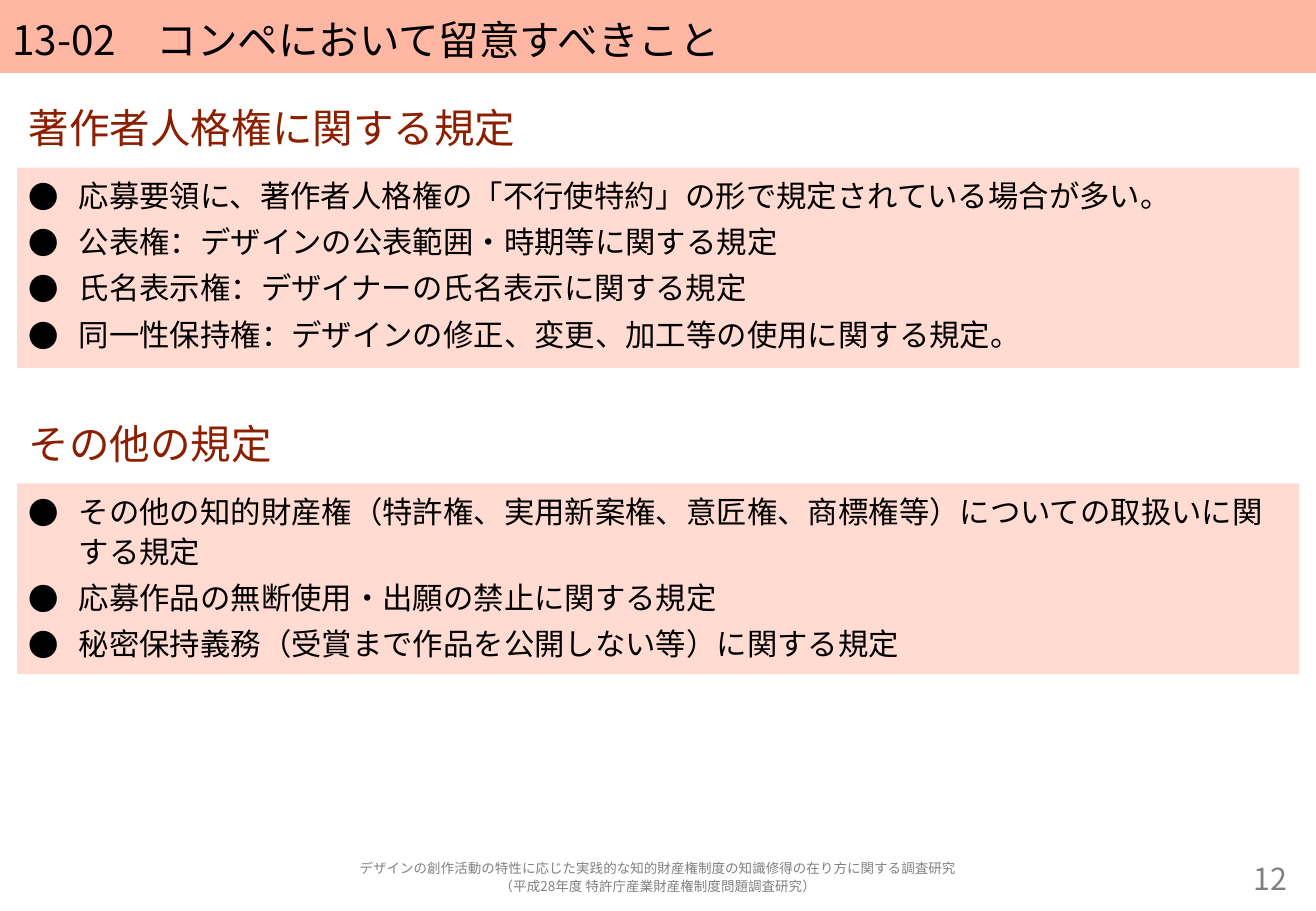
from lxml.etree import SubElement
from pptx import Presentation
from pptx.dml.color import RGBColor
from pptx.enum.shapes import MSO_SHAPE
from pptx.enum.text import MSO_ANCHOR, PP_ALIGN
from pptx.oxml.ns import qn
from pptx.util import Inches, Pt

COLOURS = {"band": "FFB7A3", "panel": "FFDBD1", "heading": "8C1F00",
           "body": "000000", "muted": "808080"}
FONT = "Noto Sans CJK JP"
LEFT, WIDTH = 0.14, 10.55
BULLET_INDENT = 0.41

SECTIONS = [
    ("著作者人格権に関する規定", 0.76, 1.65, [
        "応募要領に、著作者人格権の「不行使特約」の形で規定されている場合が多い。",
        "公表権：デザインの公表範囲・時期等に関する規定",
        "氏名表示権：デザイナーの氏名表示に関する規定",
        "同一性保持権：デザインの修正、変更、加工等の使用に関する規定。",
    ]),
    ("その他の規定", 3.36, 1.57, [
        "その他の知的財産権（特許権、実用新案権、意匠権、商標権等）についての取扱いに関する規定",
        "応募作品の無断使用・出願の禁止に関する規定",
        "秘密保持義務（受賞まで作品を公開しない等）に関する規定",
    ]),
]
FOOTER = [
    "デザインの創作活動の特性に応じた実践的な知的財産権制度の知識修得の在り方に関する調査研究",
    "（平成28年度 特許庁産業財産権制度問題調査研究）",
]


def add_bullet(para):
    properties = para._p.get_or_add_pPr()
    properties.set("marL", str(Inches(BULLET_INDENT)))
    properties.set("indent", str(-Inches(BULLET_INDENT)))
    SubElement(properties, qn("a:buFont")).set("typeface", FONT)
    SubElement(properties, qn("a:buChar")).set("char", "●")


def write_text(frame, lines, size=18, colour="body", align=PP_ALIGN.LEFT,
               anchor=MSO_ANCHOR.TOP, before=0, bullet=False):
    frame.word_wrap = True
    frame.vertical_anchor = anchor
    frame.margin_left = frame.margin_right = Inches(0.1)
    frame.margin_top = frame.margin_bottom = Inches(0.05)
    for index, line in enumerate(lines):
        para = frame.add_paragraph() if index else frame.paragraphs[0]
        para.alignment = align
        para.line_spacing = 1.1
        para.space_before = Pt(before)
        if bullet:
            add_bullet(para)
        span = para.add_run()
        span.text = line
        span.font.size = Pt(size)
        span.font.name = FONT
        span.font.color.rgb = RGBColor.from_string(COLOURS[colour])
        SubElement(span.font._element, qn("a:ea")).set("typeface", FONT)


class SlideBuilder:
    def __init__(self, deck):
        self.page = deck.slides.add_slide(deck.slide_layouts[5])

    def fill(self, shape, colour):
        shape.fill.solid()
        shape.fill.fore_color.rgb = RGBColor.from_string(COLOURS[colour])

    def title(self, text):
        box = self.page.shapes.title
        box.left, box.top = Inches(0), Inches(0)
        box.width, box.height = Inches(10.83), Inches(0.6)
        self.fill(box, "band")
        write_text(box.text_frame, [text], size=24, anchor=MSO_ANCHOR.MIDDLE)

    def text(self, lines, left, top, width, height, **style):
        box = self.page.shapes.add_textbox(
            Inches(left), Inches(top), Inches(width), Inches(height))
        write_text(box.text_frame, lines, **style)

    def panel(self, lines, top, height):
        box = self.page.shapes.add_shape(
            MSO_SHAPE.RECTANGLE, Inches(LEFT), Inches(top), Inches(WIDTH), Inches(height))
        box.shadow.inherit = False
        box.line.fill.background()
        self.fill(box, "panel")
        write_text(box.text_frame, lines, before=3.6, bullet=True)

    def section(self, heading, top, height, points):
        self.text([heading], LEFT, top, WIDTH, 0.47, size=24, colour="heading", before=4.8)
        self.panel(points, top + 0.62, height)


def main():
    deck = Presentation()
    deck.slide_width, deck.slide_height = Inches(10.83), Inches(7.5)
    slide = SlideBuilder(deck)
    slide.title("13-02　コンペにおいて留意すべきこと")
    for section in SECTIONS:
        slide.section(*section)
    slide.text(FOOTER, LEFT, 7.06, WIDTH, 0.31, size=8, colour="muted",
               align=PP_ALIGN.CENTER, anchor=MSO_ANCHOR.MIDDLE)
    slide.text(["12"], 9.35, 7.06, 1.34, 0.31, colour="muted",
               align=PP_ALIGN.RIGHT, anchor=MSO_ANCHOR.MIDDLE)
    deck.save("out.pptx")


if __name__ == "__main__":
    main()
